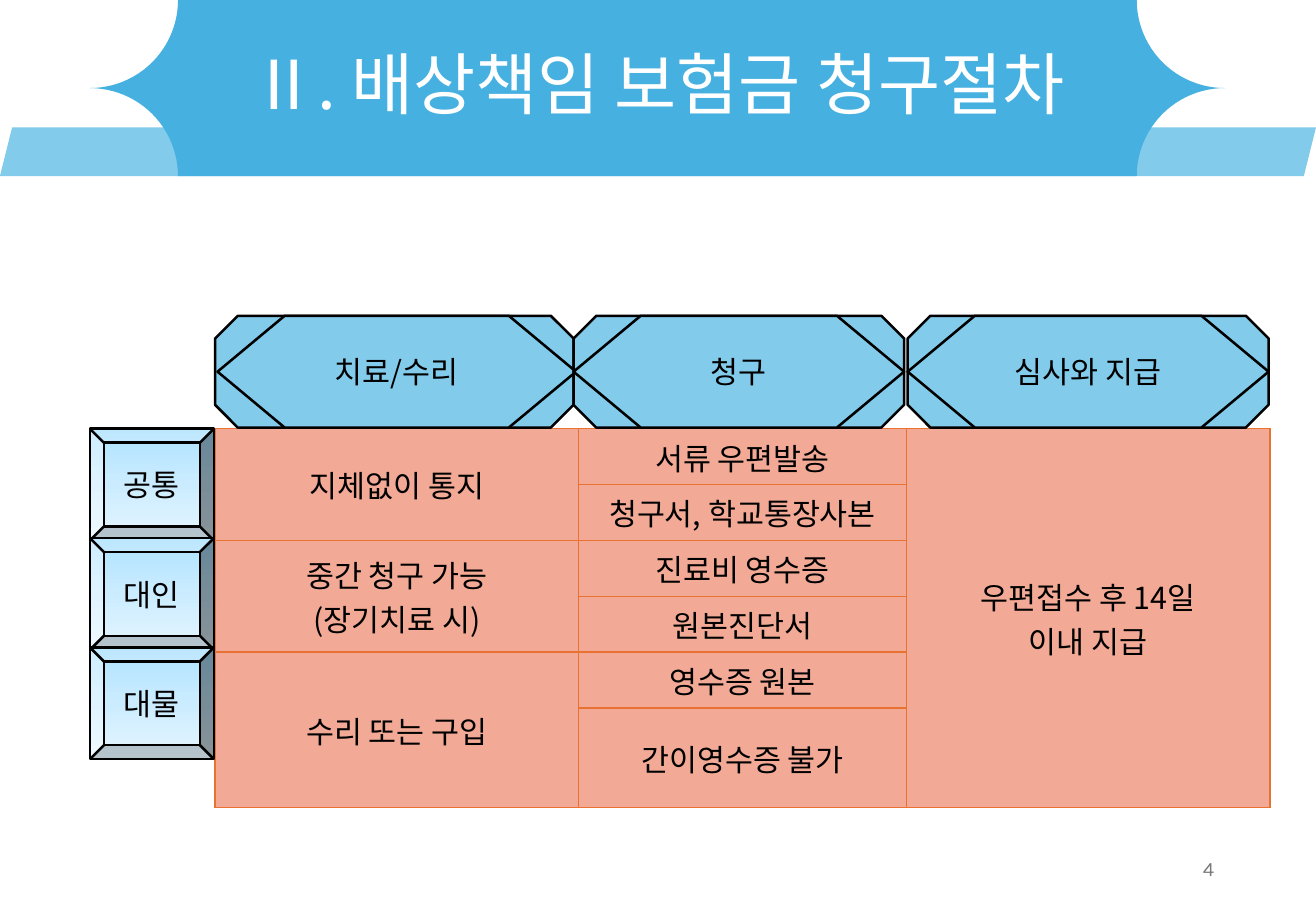
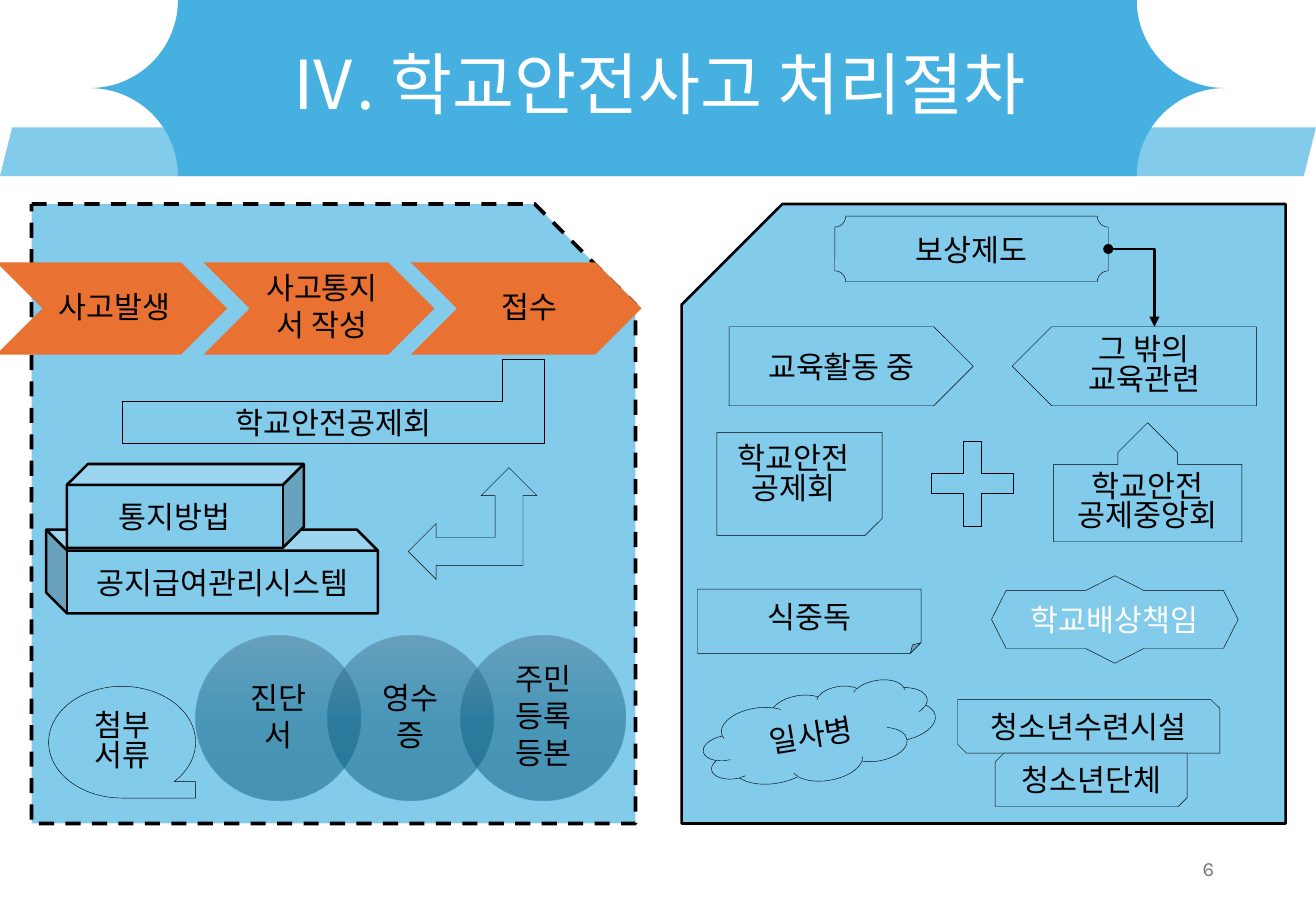
from pptx import Presentation, oxml
from pptx import util as u
from pptx.dml.color import RGBColor
from pptx.enum import dml, shapes, text
from pptx.oxml import ns

S = shapes.MSO_SHAPE
PP = text.PP_ALIGN
ANCHOR = text.MSO_ANCHOR
KOREAN, LATIN = "Noto Sans CJK KR", "Karla"
SKY, BLUE, ORANGE, SALMON = "83CBEB", "46B1E1", "E97132", "F2AA96"
BLACK, WHITE, GREY = "000000", "FFFFFF", "797979"
ICE = [(0, "ADE2FF", 100), (50, "CBECFF", 100), (100, "E5F5FF", 100)]
TEAL = [(0, "4C7591", 50), (50, "106287", 50), (100, "09597D", 50)]
BANNER = (0.74, 0, 9.34, 1.45)

# Claim procedure: header text, octagon left, hexagon left, width
STAGES = [("치료/수리", 1.77, 1.79, 2.95), ("청구", 4.72, 4.72, 2.72),
          ("심사와 지급", 7.47, 7.47, 2.97)]
CATEGORIES = ["공통", "대인", "대물"]
COLUMNS = [2.99, 2.7, 2.99]
ROWS = [0.46] * 5 + [0.82]
# row, column, rows spanned, text
CELLS = [
    (0, 0, 2, "지체없이 통지"),
    (2, 0, 2, "중간 청구 가능\n(장기치료 시)"),
    (4, 0, 2, "수리 또는 구입"),
    (0, 1, 1, "서류 우편발송"),
    (1, 1, 1, "청구서, 학교통장사본"),
    (2, 1, 1, "진료비 영수증"),
    (3, 1, 1, "원본진단서"),
    (4, 1, 1, "영수증 원본"),
    (5, 1, 1, "간이영수증 불가"),
    (0, 2, 6, "우편접수 후 14일\n이내 지급"),
]

# Accident procedure
STEPS = ["사고발생", "사고통지\n서 작성", "접수"]
DOCUMENTS = ["진단\n서", "영수\n증", "주민\n등록\n등본"]
# preset, box, text, options
NOTICE = [
    (S.CUBE, (0.38, 4.36, 2.73, 0.69), "공지급여관리시스템", dict(flip="H", width=1.5)),
    (S.CUBE, (0.55, 3.82, 1.95, 0.69), "통지방법", dict(width=1.5)),
    (S.LEFT_UP_ARROW, (3.36, 3.85, 1.06, 0.92), "", {}),
    (S.FLOWCHART_SEQUENTIAL_ACCESS_STORAGE, (0.4, 5.65, 1.21, 0.92), "첨부\n서류", {}),
]
COVERAGE = [
    (S.SNIP_1_RECTANGLE, (5.61, 1.68, 4.97, 5.1), "", dict(flip="H", width=1.5)),
    (S.PLAQUE, (6.87, 1.78, 2.25, 0.54), "보상제도", {}),
    (S.PENTAGON, (6, 2.69, 2.01, 0.65), "교육활동 중", {}),
    (S.PENTAGON, (8.33, 2.69, 2.01, 0.65), "그 밖의\n교육관련", dict(flip="H")),
    (S.SNIP_1_RECTANGLE, (5.9, 3.56, 1.36, 0.85), "", dict(flip="V")),
    (S.CROSS, (7.66, 3.63, 0.68, 0.7), "", dict(adjust=[0.392])),
    (S.UP_ARROW_CALLOUT, (8.67, 3.48, 1.55, 0.98), "학교안전\n공제중앙회",
     dict(adjust=[0.5, 0.25, 0.25, 0.65])),
    (S.FOLDED_CORNER, (5.74, 4.85, 1.84, 0.53), "식중독", {}),
    (S.QUAD_ARROW, (8.16, 4.74, 2.03, 0.72), "학교배상책임",
     dict(adjust=[0.664, 0.332, 0.299], ink=WHITE)),
    (S.CLOUD, (5.78, 5.68, 1.93, 0.75), "일사병", dict(rotation=350.8)),
    (S.SNIP_2_DIAG_RECTANGLE, (7.88, 5.76, 2.16, 0.44), "청소년수련시설", {}),
    (S.SNIP_2_DIAG_RECTANGLE, (8.19, 6.2, 1.58, 0.44), "청소년단체", dict(flip="H")),
]


def rgb(value):
    return RGBColor.from_string(value)


def inches(box):
    return [u.Inches(v) for v in box]


def xml(markup):
    """Parse a fragment whose root tag takes the drawing namespace."""
    tag, rest = markup[1:].split(" ", 1)
    return oxml.parse_xml(f"<{tag} {ns.nsdecls('a')} {rest}")


def write(frame, words, size=18, ink=BLACK, face=KOREAN, align=PP.CENTER,
          anchor=ANCHOR.MIDDLE, spacing=None, after=None):
    frame.text = words
    frame.vertical_anchor = anchor
    for paragraph in frame.paragraphs:
        paragraph.alignment = align
        paragraph.line_spacing = spacing
        if after is not None:
            paragraph.space_after = u.Pt(after)
        for run in paragraph.runs:
            run.font.size = u.Pt(size)
            run.font.name = face
            run.font.color.rgb = rgb(ink)
            latin = run.font._element.find(ns.qn("a:latin"))
            latin.addnext(xml(f'<a:ea typeface="{face}"/>'))


def gradient(shape, stops):
    shape.fill.gradient()
    marks = "".join(f'<a:gs pos="{pos * 1000}"><a:srgbClr val="{colour}">'
                    f'<a:alpha val="{alpha * 1000}"/></a:srgbClr></a:gs>'
                    for pos, colour, alpha in stops)
    props = shape.element.spPr
    props.replace(props.find(ns.qn("a:gradFill")), xml(
        f'<a:gradFill rotWithShape="1"><a:gsLst>{marks}</a:gsLst>'
        '<a:lin ang="5400000" scaled="0"/></a:gradFill>'))


def draw(slide, preset, box, words="", fill=SKY, width=0.25, flip="", adjust=(),
         rotation=0, ink=BLACK, wrap=True):
    shape = slide.shapes.add_shape(preset, *inches(box))
    shape.shadow.inherit = False
    shape.rotation = rotation
    for i, value in enumerate(adjust):
        shape.adjustments[i] = value
    if flip:
        shape.element.spPr.xfrm.set("flip" + flip, "1")
    if isinstance(fill, list):
        gradient(shape, fill)
    else:
        shape.fill.solid()
        shape.fill.fore_color.rgb = rgb(fill)
    if width:
        shape.line.width = u.Pt(width)
        shape.line.color.rgb = rgb(BLACK)
    else:
        shape.line.fill.background()
    if words:
        shape.text_frame.word_wrap = wrap
        write(shape.text_frame, words, ink=ink,
              spacing=0.82 if "\n" in words else None)
    return shape


def label(slide, box, words, insets=(0.1, 0.05, 0.1, 0.05), wrap=True, **style):
    frame = slide.shapes.add_textbox(*inches(box)).text_frame
    frame.word_wrap = wrap
    (frame.margin_left, frame.margin_top,
     frame.margin_right, frame.margin_bottom) = inches(insets)
    write(frame, words, **style)
    return frame


def add_banner(slide, layout):
    """Draw the banner once and move it into the shared layout."""
    band = draw(slide, S.PARALLELOGRAM, (0, 1.05, 10.83, 0.4), width=0)
    plaque = draw(slide, S.PLAQUE, BANNER, fill=BLUE, width=0, adjust=[0.5])
    for place, part in enumerate((band, plaque), start=2):
        layout.shapes._spTree.insert(place, part.element)


def add_slide(deck, title, number):
    slide = deck.slides.add_slide(deck.slide_layouts[5])
    heading = slide.shapes.title
    heading.left, heading.top, heading.width, heading.height = inches(BANNER)
    write(heading.text_frame, title, size=40, ink=WHITE, spacing=0.9)
    label(slide, (7.65, 6.95, 2.44, 0.4), number, size=12, ink=GREY,
          face=LATIN, align=PP.RIGHT)
    return slide


def add_claim_table(slide):
    table = slide.shapes.add_table(
        len(ROWS), len(COLUMNS),
        *inches((1.77, 3.53, sum(COLUMNS), sum(ROWS)))).table
    table.first_row = table.horz_banding = False
    for column, width in zip(table.columns, COLUMNS):
        column.width = u.Inches(width)
    for row, height in zip(table.rows, ROWS):
        row.height = u.Inches(height)
    for cell in table.iter_cells():
        props = cell._tc.get_or_add_tcPr()
        for side in "LRTB":
            props.append(xml(
                f'<a:ln{side} w="12700"><a:solidFill><a:srgbClr val="{ORANGE}"/>'
                f'</a:solidFill></a:ln{side}>'))
        cell.fill.solid()
        cell.fill.fore_color.rgb = rgb(SALMON)
    for row, column, span, words in CELLS:
        cell = table.cell(row, column)
        if span > 1:
            cell.merge(table.cell(row + span - 1, column))
        write(cell.text_frame, words)
        cell.vertical_anchor = ANCHOR.MIDDLE


def build_claims(slide):
    add_claim_table(slide)
    # Column headers
    for words, outer, inner, width in STAGES:
        draw(slide, S.OCTAGON, (outer, 2.6, width, 0.92), width=1.5, adjust=[0.203])
        draw(slide, S.HEXAGON, (inner, 2.6, width, 0.92), words, width=1.5, adjust=[0.6])
    # Row buttons
    for i, words in enumerate(CATEGORIES):
        draw(slide, S.BEVEL, (0.74, 3.53 + 0.9 * i, 1.02, 0.92), words,
             fill=ICE, width=1.5, wrap=False)


def add_elbow(slide):
    ends = inches((9.12, 2.05, 9.5, 2.69))
    elbow = slide.shapes.add_connector(shapes.MSO_CONNECTOR.ELBOW, *ends)
    elbow.line.color.rgb = rgb(BLACK)
    elbow.line.width = u.Pt(1.5)
    props = elbow._element.spPr
    props.find(ns.qn("a:prstGeom")).set("prst", "bentConnector2")
    line = props.find(ns.qn("a:ln"))
    line.append(xml('<a:headEnd type="oval"/>'))
    line.append(xml('<a:tailEnd type="triangle"/>'))
    props.append(xml("<a:effectLst />"))


def build_accidents(slide):
    # Left panel
    panel = draw(slide, S.SNIP_1_RECTANGLE, (0.26, 1.68, 4.97, 5.1), width=2.25)
    panel.line.dash_style = dml.MSO_LINE.DASH
    draw(slide, S.CORNER, (1.01, 2.96, 3.47, 0.69), "학교안전공제회", flip="H")
    flow = dict(spacing=0.9, after=2.5)
    for i, words in enumerate(STEPS):
        left = -0.03 + 1.705 * i
        draw(slide, S.CHEVRON, (left, 2.16, 1.9, 0.76), fill=ORANGE, width=0)
        label(slide, (left + 0.38, 2.16, 1.14, 0.76), words,
              insets=(0.08, 0.03, 0.03, 0.03), **flow)
    for preset, box, words, options in NOTICE:
        draw(slide, preset, box, words, **options)
    for i, words in enumerate(DOCUMENTS):
        left = 1.61 + 1.09 * i
        draw(slide, S.OVAL, (left, 5.23, 1.36, 1.36), fill=TEAL, width=0)
        label(slide, (left + 0.2, 5.43, 0.96, 0.96), words,
              insets=(0.07, 0.03, 0.07, 0.03), **flow)
    # Right panel
    for preset, box, words, options in COVERAGE:
        draw(slide, preset, box, words, **options)
    add_elbow(slide)
    association = label(slide, (5.97, 3.62, 1.21, 0.71), "학교안전\n공제회",
                        wrap=False, anchor=ANCHOR.TOP, spacing=0.82)
    association.paragraphs[0].alignment = PP.LEFT


def main():
    deck = Presentation()
    deck.slide_width, deck.slide_height = inches((10.83, 7.5))
    claims = add_slide(deck, "Ⅱ. 배상책임 보험금 청구절차", "4")
    add_banner(claims, deck.slide_layouts[5])
    build_claims(claims)
    build_accidents(add_slide(deck, "Ⅳ. 학교안전사고 처리절차", "6"))
    deck.save("out.pptx")


if __name__ == "__main__":
    main()
